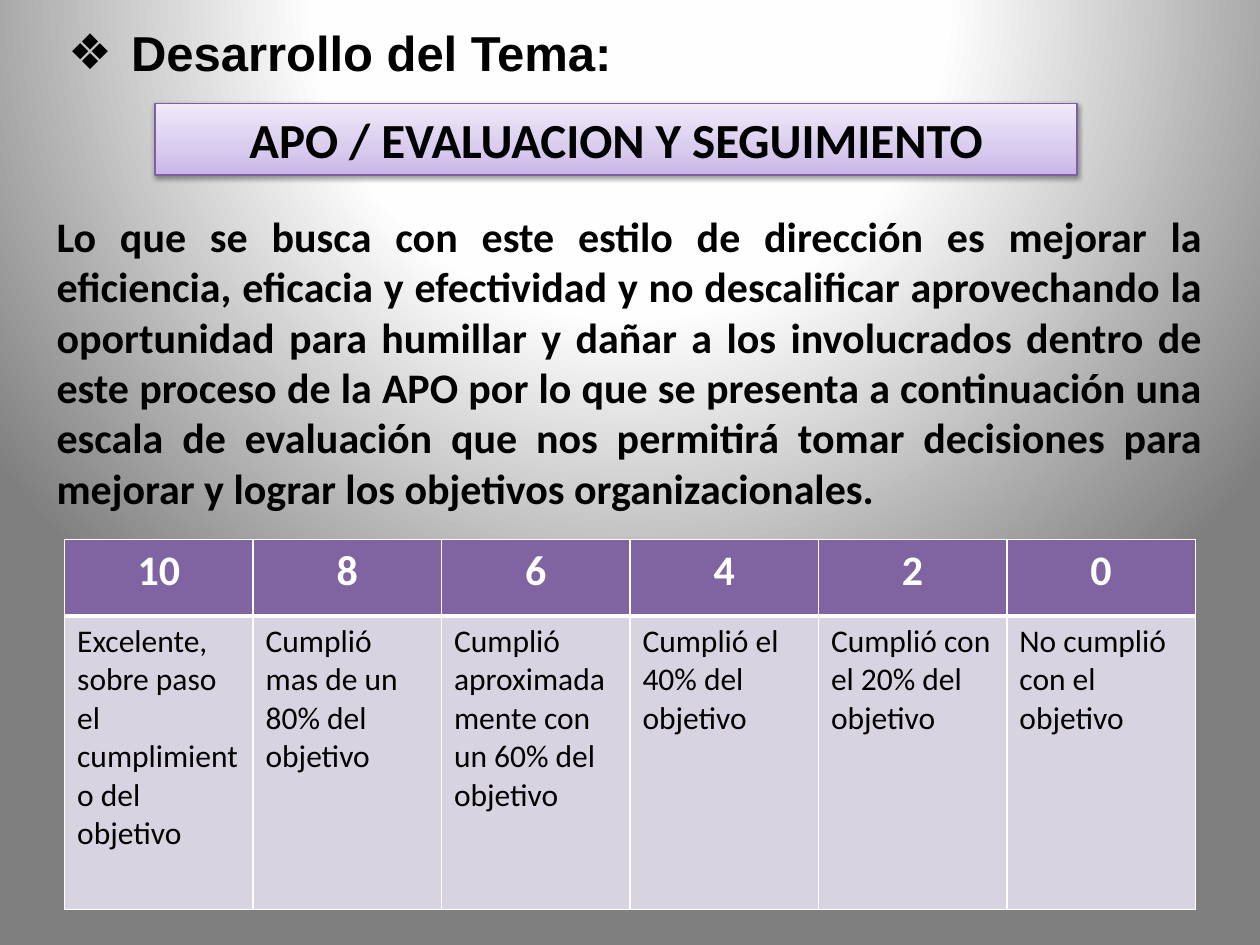
"""Build the slide on APO evaluation and follow-up."""
from pptx import Presentation
from pptx.dml.color import RGBColor
from pptx.enum.shapes import MSO_SHAPE
from pptx.enum.text import MSO_ANCHOR, MSO_AUTO_SIZE, PP_ALIGN
from pptx.oxml import parse_xml
from pptx.oxml.ns import nsdecls, qn
from pptx.util import Pt

LEFT, CENTER, JUSTIFY = PP_ALIGN.LEFT, PP_ALIGN.CENTER, PP_ALIGN.JUSTIFY
TOP, MIDDLE = MSO_ANCHOR.TOP, MSO_ANCHOR.MIDDLE
NO_AUTOFIT = MSO_AUTO_SIZE.NONE
RECTANGLE = MSO_SHAPE.RECTANGLE

BLACK = RGBColor(0x00, 0x00, 0x00)
WHITE = RGBColor(0xFF, 0xFF, 0xFF)
NEAR_WHITE = RGBColor(0xFE, 0xFE, 0xFE)
GREY = RGBColor(0x7F, 0x7F, 0x7F)
LILAC_DARK = RGBColor(0xC9, 0xB5, 0xE8)
LILAC = RGBColor(0xD8, 0xCB, 0xEE)
LILAC_LIGHT = RGBColor(0xF0, 0xEA, 0xF9)
PURPLE_EDGE = RGBColor(0x7D, 0x60, 0xA0)
PURPLE = RGBColor(0x80, 0x64, 0xA2)
LAVENDER = RGBColor(0xD8, 0xD3, 0xE0)

RADIAL = ('<a:path path="circle">'
          '<a:fillToRect l="50000" t="-80000" r="50000" b="180000"/></a:path>')
UPWARD = '<a:lin ang="16200000" scaled="0"/>'

EXPLANATION = (
    "Lo que se busca con este estilo de dirección es mejorar la eficiencia, "
    "eficacia y efectividad y no descalificar aprovechando la oportunidad para "
    "humillar y dañar a los involucrados dentro de este proceso de la APO por lo "
    "que se presenta a continuación una escala de evaluación que nos permitirá "
    "tomar decisiones para mejorar y lograr los objetivos organizacionales."
)
SCALE = [
    ("10", "Excelente, sobre paso el cumplimiento del objetivo"),
    ("8", "Cumplió mas de un 80% del objetivo"),
    ("6", "Cumplió aproximadamente con un 60% del objetivo"),
    ("4", "Cumplió el 40% del objetivo"),
    ("2", "Cumplió con el 20% del objetivo"),
    ("0", "No cumplió con el objetivo"),
]


def write_text(frame, text, size, alignment, color=BLACK, bold=True, font="Calibri"):
    """Fill a text frame with one formatted paragraph and return it."""
    frame.word_wrap = True
    paragraph = frame.paragraphs[0]
    paragraph.text = text
    paragraph.alignment = alignment
    paragraph.font.name = font
    paragraph.font.size = Pt(size)
    paragraph.font.bold = bold
    paragraph.font.color.rgb = color
    return paragraph


def set_gradient(fill, properties, stops, direction):
    """Give an element a gradient with the stated stops and direction."""
    fill.solid()
    stop_xml = "".join(
        f'<a:gs pos="{percent * 1000}"><a:srgbClr val="{color}"/></a:gs>'
        for percent, color in stops)
    gradient = parse_xml(f'<a:gradFill {nsdecls("a")} rotWithShape="1">'
                         f'<a:gsLst>{stop_xml}</a:gsLst>{direction}</a:gradFill>')
    properties.replace(properties.find(qn("a:solidFill")), gradient)


def paint_background(slide):
    """Paint the radial white-to-grey background."""
    fill = slide.background.fill
    fill.solid()
    set_gradient(fill, slide.element.find(".//" + qn("p:bgPr")),
                 [(0, WHITE), (40, NEAR_WHITE), (100, GREY)], RADIAL)


def add_heading(slide):
    """Place the bulleted slide title."""
    heading = slide.shapes.title
    heading.left, heading.top, heading.width, heading.height = (
        Pt(31.7), Pt(9.4), Pt(663), Pt(104.4))
    frame = heading.text_frame
    frame.auto_size = NO_AUTOFIT
    frame.vertical_anchor = TOP
    paragraph = write_text(frame, "Desarrollo del Tema:", 28, LEFT, font="Arial")
    properties = paragraph.font._element.getparent()
    properties.set("marL", str(Pt(36)))
    properties.set("indent", str(Pt(-36)))
    properties.insert(0, parse_xml(f'<a:buFont {nsdecls("a")} typeface="Arial"/>'))
    properties.insert(1, parse_xml(f'<a:buChar {nsdecls("a")} char="❖"/>'))


def add_banner(slide):
    """Add the lilac banner with the topic."""
    banner = slide.shapes.add_shape(RECTANGLE, Pt(88.5), Pt(59), Pt(527), Pt(41))
    properties = banner.element.spPr
    set_gradient(banner.fill, properties,
                 [(0, LILAC_DARK), (35, LILAC), (100, LILAC_LIGHT)], UPWARD)
    banner.line.color.rgb = PURPLE_EDGE
    banner.line.width = Pt(0.75)
    banner.shadow.inherit = False
    properties.find(qn("a:effectLst")).append(parse_xml(
        f'<a:outerShdw {nsdecls("a")} blurRad="{Pt(3.1)}" dist="{Pt(1.6)}" '
        f'dir="5400000" rotWithShape="0"><a:srgbClr val="{BLACK}">'
        '<a:alpha val="38000"/></a:srgbClr></a:outerShdw>'))
    banner.text_frame.vertical_anchor = MIDDLE
    write_text(banner.text_frame, "APO / EVALUACION Y SEGUIMIENTO", 28, CENTER)


def add_explanation(slide):
    """Add the justified explanation."""
    explanation = slide.shapes.add_textbox(Pt(25.2), Pt(116.6), Pt(669), Pt(181.4))
    write_text(explanation.text_frame, EXPLANATION, 24, JUSTIFY)


def format_cell(cell, fill_color, thick_side):
    """Fill a cell and draw its white borders, one of them thick."""
    properties = cell._tc.get_or_add_tcPr()
    for side in ("lnL", "lnR", "lnT", "lnB"):
        width = Pt(3 if side == thick_side else 1)
        properties.append(parse_xml(
            f'<a:{side} {nsdecls("a")} w="{width}"><a:solidFill>'
            f'<a:srgbClr val="{WHITE}"/></a:solidFill></a:{side}>'))
    cell.fill.solid()
    cell.fill.fore_color.rgb = fill_color


def add_scale(slide):
    """Add the table of scores and their meanings."""
    table = slide.shapes.add_table(
        2, len(SCALE), Pt(36.9), Pt(308.2), Pt(646.2), Pt(211.5)).table
    table.horz_banding = False
    table.rows[0].height, table.rows[1].height = Pt(43.9), Pt(167.6)
    for column, (score, meaning) in enumerate(SCALE):
        table.columns[column].width = Pt(107.7)
        score_cell, meaning_cell = table.cell(0, column), table.cell(1, column)
        format_cell(score_cell, PURPLE, "lnB")
        write_text(score_cell.text_frame, score, 24, CENTER, WHITE)
        format_cell(meaning_cell, LAVENDER, "lnT")
        write_text(meaning_cell.text_frame, meaning, 18, LEFT, bold=False)


def main():
    """Build and save the presentation."""
    presentation = Presentation()
    presentation.slide_width, presentation.slide_height = Pt(720), Pt(540)
    slide = presentation.slides.add_slide(presentation.slide_layouts[5])
    paint_background(slide)
    add_heading(slide)
    add_banner(slide)
    add_explanation(slide)
    add_scale(slide)
    presentation.save("out.pptx")


if __name__ == "__main__":
    main()
